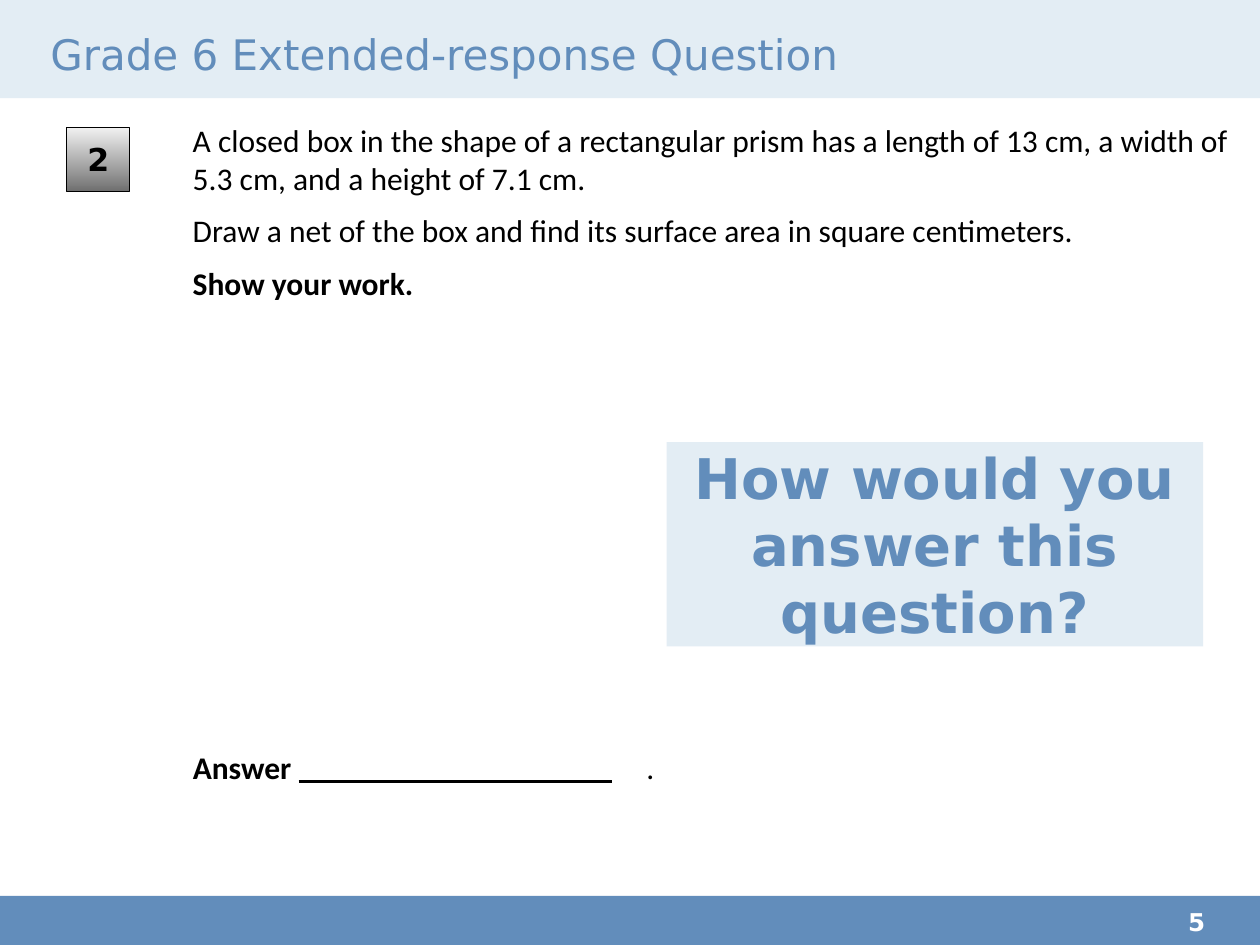
from dataclasses import dataclass

from lxml.etree import SubElement
from pptx import Presentation
from pptx.dml.color import RGBColor
from pptx.enum.shapes import MSO_CONNECTOR, MSO_SHAPE
from pptx.enum.text import MSO_ANCHOR, PP_ALIGN
from pptx.oxml.ns import qn
from pptx.util import Inches, Pt


@dataclass(frozen=True)
class Theme:
    blue: str = "628DBB"
    pale: str = "E3EDF4"
    white: str = "FFFFFF"
    black: str = "000000"
    light: str = "F2F2F2"
    dark: str = "707070"
    head: str = "DejaVu Sans"
    body: str = "Calibri"
    title: int = 24
    text: int = 18
    call: int = 32
    page: int = 14


@dataclass(frozen=True)
class Box:
    left: float
    top: float
    width: float
    height: float

    def place(self) -> tuple:
        return tuple(map(Inches, (self.left, self.top, self.width, self.height)))


@dataclass(frozen=True)
class Style:
    font: str
    size: int
    color: str
    bold: bool = False


@dataclass(frozen=True)
class Line:
    text: str
    style: Style


T = Theme()
PLAIN = Style(T.body, T.text, T.black)
STRONG = Style(T.body, T.text, T.black, True)


def write(shape, lines: list[Line], inset=(0, 0, 0.1, 0.05), align=PP_ALIGN.LEFT,
          anchor=MSO_ANCHOR.TOP, gap: float = 0) -> None:
    frame = shape.text_frame
    frame.word_wrap = True
    frame.vertical_anchor = anchor
    (frame.margin_left, frame.margin_top,
     frame.margin_right, frame.margin_bottom) = map(Inches, inset)
    frame.text = "\n".join(line.text for line in lines)
    for i, (para, line) in enumerate(zip(frame.paragraphs, lines)):
        para.alignment = align
        para.space_before = Pt(gap if i else 0)
        font = para.runs[0].font
        font.name = line.style.font
        font.size = Pt(line.style.size)
        font.bold = line.style.bold
        font.color.rgb = RGBColor.from_string(line.style.color)


def block(slide, box: Box, fill: str):
    shape = slide.shapes.add_shape(MSO_SHAPE.RECTANGLE, *box.place())
    shape.shadow.inherit = False
    shape.fill.solid()
    shape.fill.fore_color.rgb = RGBColor.from_string(fill)
    shape.line.fill.background()
    return shape


def label(slide, box: Box, lines: list[Line], **layout) -> None:
    write(slide.shapes.add_textbox(*box.place()), lines, **layout)


def badge(slide, box: Box, text: str) -> None:
    shape = block(slide, box, T.light)
    shape.fill.gradient()
    shape.fill.gradient_angle = 270
    for stop, color in zip(shape.fill.gradient_stops, (T.light, T.dark)):
        stop.color.rgb = RGBColor.from_string(color)
    shape.line.color.rgb = RGBColor.from_string(T.black)
    shape.line.width = Pt(0.75)
    write(shape, [Line(text, Style(T.head, T.text, T.black, True))],
          inset=(0.1, 0.1, 0.1, 0.05), align=PP_ALIGN.CENTER)


def rule(slide, left: float, right: float, top: float) -> None:
    line = slide.shapes.add_connector(
        MSO_CONNECTOR.STRAIGHT, *map(Inches, (left, top, right, top)))
    line.line.color.rgb = RGBColor.from_string(T.black)
    line.line.width = Pt(1.75)
    SubElement(line._element.spPr, qn("a:effectLst"))


def main() -> None:
    deck = Presentation()
    deck.slide_width, deck.slide_height = Inches(10), Inches(7.5)
    slide = deck.slides.add_slide(deck.slide_layouts[6])

    # Header and footer bands
    block(slide, Box(0, 0, 10, 0.78), T.pale)
    block(slide, Box(0, 7.11, 10, 0.39), T.blue)
    label(slide, Box(0.4, 0.23, 9, 0.49),
          [Line("Grade 6 Extended-response Question",
                Style(T.head, T.title, T.blue))])
    label(slide, Box(9.43, 7.2, 0.57, 0.3),
          [Line("5", Style(T.head, T.page, T.white, True))], inset=(0, 0, 0, 0))

    # Question
    badge(slide, Box(0.53, 1.01, 0.5, 0.51), "2")
    label(slide, Box(1.53, 0.96, 8.47, 1.6), [
        Line("A closed box in the shape of a rectangular prism has a length of "
             "13 cm, a width of 5.3 cm, and a height of 7.1 cm.", PLAIN),
        Line("Draw a net of the box and find its surface area in square "
             "centimeters.", PLAIN),
        Line("Show your work.", STRONG),
    ], gap=8.5)

    # Prompt
    write(block(slide, Box(5.29, 3.51, 4.26, 1.62), T.pale),
          [Line("How would you answer this question?",
                Style(T.head, T.call, T.blue, True))],
          inset=(0, 0, 0, 0), align=PP_ALIGN.CENTER, anchor=MSO_ANCHOR.MIDDLE)

    # Answer line
    label(slide, Box(1.53, 5.94, 0.95, 0.36), [Line("Answer", STRONG)])
    rule(slide, 2.37, 4.86, 6.2)
    label(slide, Box(5.13, 5.94, 0.25, 0.36), [Line(".", PLAIN)])

    deck.save("out.pptx")


if __name__ == "__main__":
    main()
